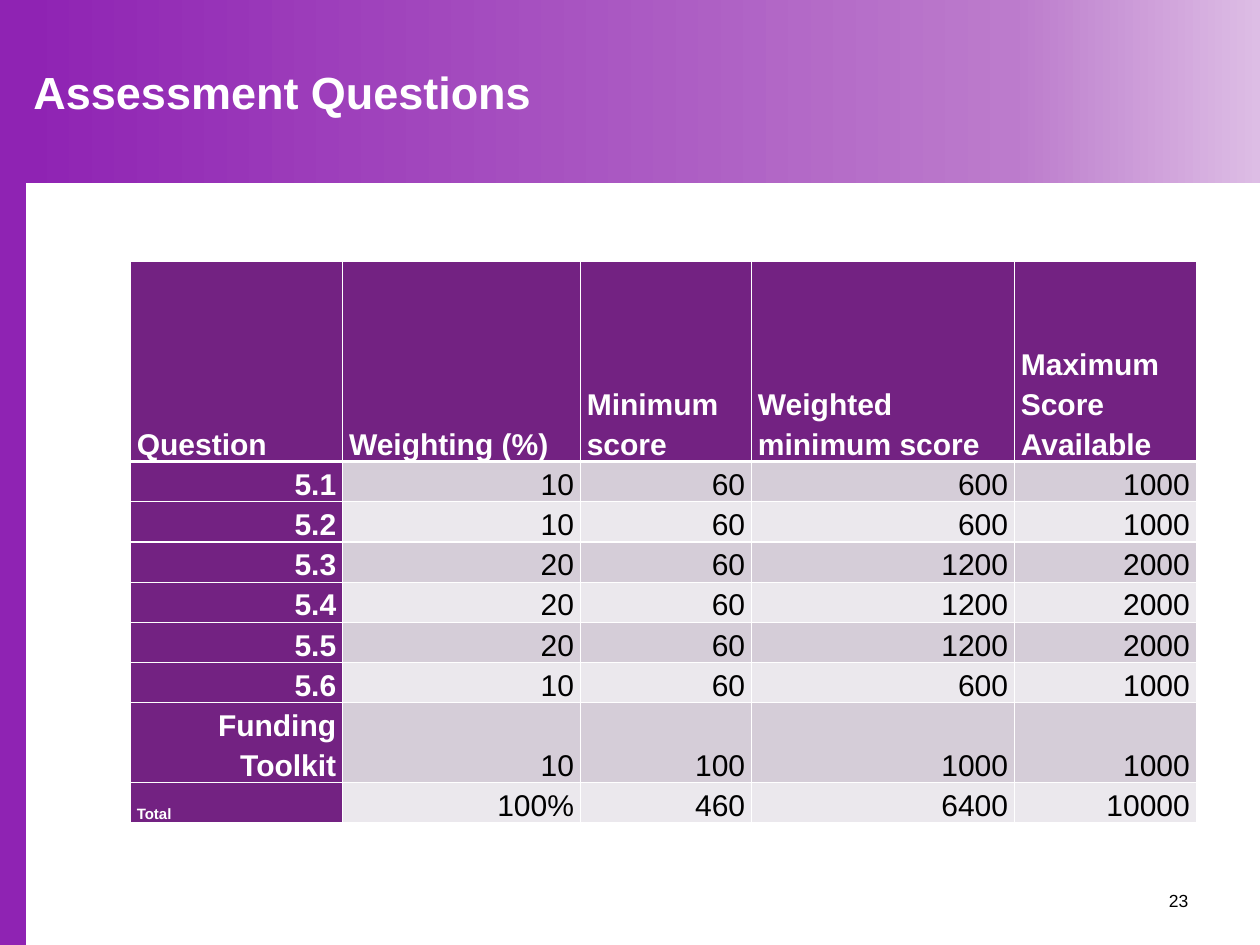
"""Build the Assessment Questions slide with its score table."""
from copy import deepcopy
from lxml import etree
from pptx import Presentation
from pptx.dml.color import RGBColor
from pptx.enum import shapes, text
from pptx.oxml import ns
from pptx.util import Cm, Pt


def tint(code):
    return RGBColor.from_string(code)


def style(para, size, code, bold=False):
    font = para.font
    font.name, font.size, font.bold = "Arial", Pt(size), bold
    font.color.rgb = tint(code)


WHITE, BLACK, VIOLET, PLUM = "FFFFFF", "000000", "8F23B3", "732282"
BANDS = ["EBE8ED", "D5CDD8"]
ROWS = [
    ["Question", "Weighting (%)", "Minimum score", "Weighted minimum score", "Maximum Score Available"],
    ["5.1", "10", "60", "600", "1000"],
    ["5.2", "10", "60", "600", "1000"],
    ["5.3", "20", "60", "1200", "2000"],
    ["5.4", "20", "60", "1200", "2000"],
    ["5.5", "20", "60", "1200", "2000"],
    ["5.6", "10", "60", "600", "1000"],
    ["Funding Toolkit", "10", "100", "1000", "1000"],
    ["Total", "100%", "460", "6400", "10000"],
]
WIDTHS = [5.99, 6.71, 4.83, 7.42, 5.13]
HEIGHTS = [5.66] + [1.04] * 7 + [1.09]

deck = Presentation()
deck.slide_width, deck.slide_height = Cm(35.56), Cm(26.67)
slide = deck.slides.add_slide(deck.slide_layouts[5])
items = slide.shapes

side = items.add_shape(shapes.MSO_SHAPE.RECTANGLE, 0, 0, Cm(0.71), Cm(26.67))
side.shadow.inherit = False
side.fill.solid()
side.fill.fore_color.rgb = tint(VIOLET)
side.line.color.rgb = tint(VIOLET)
side.line.width = Pt(2)

top = items.add_shape(shapes.MSO_SHAPE.RECTANGLE, Cm(0.69), 0, Cm(34.87), Cm(5.18))
top.shadow.inherit = False
top.line.fill.background()
top.fill.gradient()
top.fill.gradient_angle = 0
stops = top._element.spPr.find(".//" + ns.qn("a:gsLst"))
stops.append(deepcopy(stops[-1]))
for stop, (place, code) in zip(top.fill.gradient_stops, [(0, VIOLET), (0.8, "BC7BCC"), (1, "DDBDE5")]):
    stop.position = place
    stop.color.rgb = tint(code)

page = items.add_textbox(Cm(25.48), Cm(24.71), Cm(8.31), Cm(1.42))
page.text_frame.word_wrap = True
page.text_frame.vertical_anchor = text.MSO_ANCHOR.MIDDLE
page.text_frame.text = "23"
page.text_frame.paragraphs[0].alignment = text.PP_ALIGN.RIGHT
style(page.text_frame.paragraphs[0], 14, BLACK)

title = items.title
title.left, title.top, title.width, title.height = Cm(0.69), 0, Cm(34.87), Cm(3.81)
items._spTree.append(title._element)
frame = title.text_frame
frame.text = "Assessment Questions"
frame.auto_size = text.MSO_AUTO_SIZE.NONE
frame.vertical_anchor = text.MSO_ANCHOR.TOP
frame.margin_top = Cm(1.81)
frame.paragraphs[0].alignment = text.PP_ALIGN.LEFT
style(frame.paragraphs[0], 36, WHITE, True)

table = items.add_table(len(ROWS), len(WIDTHS), Cm(3.68), Cm(7.37),
                        Cm(sum(WIDTHS)), Cm(sum(HEIGHTS))).table
for col, width in zip(table.columns, WIDTHS):
    col.width = Cm(width)
for r, (row, height) in enumerate(zip(ROWS, HEIGHTS)):
    table.rows[r].height = Cm(height)
    for c, words in enumerate(row):
        cell = table.cell(r, c)
        cell.text = words
        cell.vertical_anchor = text.MSO_ANCHOR.BOTTOM
        cell.margin_left = cell.margin_right = Cm(0.18)
        cell.margin_top = cell.margin_bottom = 0
        head = r == 0 or c == 0
        cell.fill.solid()
        cell.fill.fore_color.rgb = tint(PLUM if head else BANDS[r % 2])
        para = cell.text_frame.paragraphs[0]
        para.line_spacing = 1.2
        left = r == 0 or words == "Total"
        para.alignment = text.PP_ALIGN.LEFT if left else text.PP_ALIGN.RIGHT
        style(para, 12 if words == "Total" else 24, WHITE if head else BLACK, head)
        props = cell._tc.get_or_add_tcPr()
        for i, edge in enumerate("LRTB"):
            thick = (r, edge) in [(0, "B"), (1, "T")]
            line = etree.Element(ns.qn("a:ln" + edge), w=str(Pt(3 if thick else 1)))
            fill = etree.SubElement(line, ns.qn("a:solidFill"))
            etree.SubElement(fill, ns.qn("a:srgbClr"), val=WHITE)
            props.insert(i, line)

deck.save("out.pptx")
